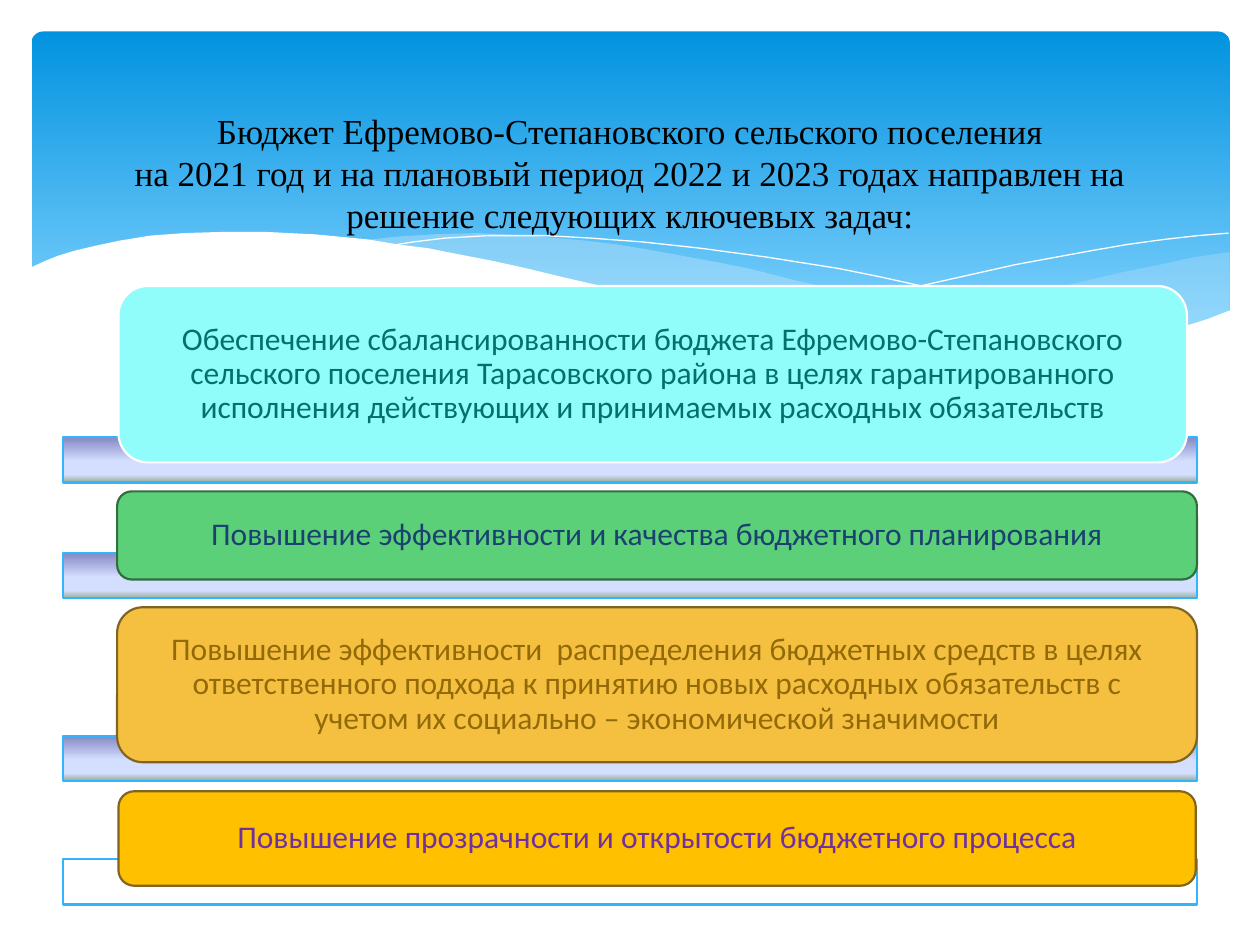
from lxml import etree
from pptx import Presentation
from pptx.dml.color import RGBColor
from pptx.enum.shapes import MSO_SHAPE
from pptx.enum.text import MSO_ANCHOR, MSO_AUTO_SIZE, PP_ALIGN
from pptx.oxml.ns import qn
from pptx.util import Inches, Pt

RECTANGLE = MSO_SHAPE.RECTANGLE
ROUNDED = MSO_SHAPE.ROUNDED_RECTANGLE
MIDDLE = MSO_ANCHOR.MIDDLE
CENTER = PP_ALIGN.CENTER
NO_AUTOFIT = MSO_AUTO_SIZE.NONE
TITLE_ONLY = 5

TITLE = (
    "Бюджет Ефремово-Степановского сельского поселения\v"
    "на 2021 год и на плановый период 2022 и 2023 годах направлен на "
    "решение следующих ключевых задач:"
)
HEADER_STOPS = [(0, "0293E0"), (90, "83D3FE")]
BAR_STOPS = [(0, "8488C4"), (53, "D4DEFF"), (83, "D4DEFF"), (100, "96AB94")]

TASKS = [
    ("Обеспечение сбалансированности бюджета Ефремово-Степановского сельского "
     "поселения Тарасовского района в целях гарантированного исполнения "
     "действующих и принимаемых расходных обязательств",
     (0.94, 2.27, 8.48, 1.4), 3.47, "91FDFA", "FFFFFF", "03706E"),
    ("Повышение эффективности и качества бюджетного планирования",
     (0.93, 3.9, 8.57, 0.7), 4.39, "5BD078", "306D3F", "1B4171"),
    ("Повышение эффективности  распределения бюджетных средств в целях "
     "ответственного подхода к принятию новых расходных обязательств с учетом "
     "их социально – экономической значимости",
     (0.93, 4.82, 8.57, 1.23), 5.84, "F5C040", "806421", "936A08"),
    ("Повышение прозрачности и открытости бюджетного процесса",
     (0.94, 6.28, 8.55, 0.75), 6.82, "FFC000", "806421", "7030A0"),
]

RIGHT_WAVE = [
    (9.76, 2), (9.48, 2.04), (9.21, 2.1), (8.91, 2.16), (8.61, 2.23),
    (8.05, 2.37), (7.53, 2.48), (7.06, 2.57), (6.61, 2.65), (6.91, 2.69),
    (7.19, 2.72), (7.45, 2.75), (7.69, 2.77), (8.03, 2.78), (8.35, 2.77),
    (8.63, 2.75), (8.89, 2.72), (9.13, 2.67), (9.35, 2.62), (9.49, 2.57),
    (9.63, 2.52), (9.76, 2.47),
]
MIDDLE_WAVE = [
    (8.93, 2.73), (8.66, 2.69), (8.37, 2.65), (8.07, 2.6), (7.75, 2.54),
    (7.41, 2.47), (7.06, 2.4), (6.68, 2.31), (6.29, 2.22), (5.98, 2.14),
    (5.69, 2.08), (5.41, 2.03), (5.14, 1.98), (4.89, 1.94), (4.65, 1.91),
    (4.42, 1.89), (4.2, 1.87), (3.8, 1.85), (3.44, 1.86), (3.13, 1.88),
    (2.86, 1.91), (3.23, 1.96), (3.62, 2.03), (4.04, 2.11), (4.49, 2.22),
    (4.91, 2.32), (5.3, 2.4), (5.66, 2.48), (6.01, 2.55), (6.34, 2.61),
    (6.65, 2.66), (6.95, 2.7), (7.22, 2.74), (7.48, 2.76), (7.85, 2.78),
    (8.28, 2.78), (8.57, 2.77), (8.76, 2.75),
]
FALLING_LINE = [
    (3.09, 1.95), (3.28, 1.92), (3.53, 1.89), (3.87, 1.87), (4.33, 1.87),
    (4.69, 1.89), (5.1, 1.92), (5.56, 1.97), (6.08, 2.04), (6.65, 2.13),
    (6.95, 2.19), (7.27, 2.26), (7.6, 2.33), (7.95, 2.41), (8.31, 2.51),
    (8.69, 2.61), (9.07, 2.72),
]
RISING_LINE = [
    (6.13, 2.57), (6.53, 2.46), (6.95, 2.35), (7.48, 2.23), (8.06, 2.1),
    (8.66, 1.99), (8.95, 1.94), (9.24, 1.9), (9.51, 1.87), (9.75, 1.85),
]
WHITE_WAVE = [
    (9.77, 2.46), (9.59, 2.53), (9.4, 2.59), (9.2, 2.65), (8.99, 2.69),
    (8.75, 2.73), (8.5, 2.75), (8.23, 2.77), (7.93, 2.76), (7.61, 2.75),
    (7.26, 2.72), (6.88, 2.68), (6.48, 2.62), (6.03, 2.54), (5.55, 2.45),
    (5.03, 2.33), (4.47, 2.2), (4.18, 2.13), (3.91, 2.07), (3.65, 2.02),
    (3.4, 1.97), (3.16, 1.94), (2.92, 1.9), (2.71, 1.88), (2.5, 1.86),
    (2.3, 1.85), (2.11, 1.84), (1.77, 1.84), (1.46, 1.85), (1.19, 1.87),
    (0.95, 1.91), (0.76, 1.95), (0.59, 1.99), (0.46, 2.03), (0.36, 2.07),
    (0.23, 2.13), (0.23, 3.29), (9.77, 3.29),
]


def color(value):
    return RGBColor.from_string(value)


def fill_solid(shape, value, opacity=100):
    shape.fill.solid()
    shape.fill.fore_color.rgb = color(value)
    if opacity < 100:
        node = shape.element.spPr.find(f"{qn('a:solidFill')}/{qn('a:srgbClr')}")
        etree.SubElement(node, qn("a:alpha"), val=str(opacity * 1000))


def fill_gradient(shape, stops):
    shape.fill.gradient()
    shape.fill.gradient_angle = 270
    stop_list = shape.element.spPr.find(f".//{qn('a:gsLst')}")
    stop_list.clear()
    for position, value in stops:
        stop = etree.SubElement(stop_list, qn("a:gs"), pos=str(position * 1000))
        etree.SubElement(stop, qn("a:srgbClr"), val=value)


def set_outline(shape, value=None, width=1.25):
    if value is None:
        shape.line.fill.background()
    else:
        shape.line.color.rgb = color(value)
        shape.line.width = Pt(width)


def add_box(slide, kind, box):
    shape = slide.shapes.add_shape(kind, *map(Inches, box))
    shape.shadow.inherit = False
    return shape


def add_curve(slide, points, closed):
    points = [(Inches(x), Inches(y)) for x, y in points]
    builder = slide.shapes.build_freeform(*points[0])
    builder.add_line_segments(points[1:], close=closed)
    shape = builder.convert_to_shape()
    shape.shadow.inherit = False
    return shape


def add_wave(slide, points, value, opacity=100):
    wave = add_curve(slide, points, True)
    fill_solid(wave, value, opacity)
    set_outline(wave)


def add_wave_line(slide, points):
    wave_line = add_curve(slide, points, False)
    wave_line.fill.background()
    set_outline(wave_line, "FFFFFF", 0)


def add_header(slide, box):
    panel = add_box(slide, ROUNDED, box)
    panel.adjustments[0] = 0.034
    fill_gradient(panel, HEADER_STOPS)
    set_outline(panel)
    add_wave(slide, RIGHT_WAVE, "C6E7FC", 29)
    add_wave(slide, MIDDLE_WAVE, "C6E7FC", 40)
    add_wave_line(slide, FALLING_LINE)
    add_wave_line(slide, RISING_LINE)
    add_wave(slide, WHITE_WAVE, "FFFFFF")


def write_text(shape, text, font_name, size, value):
    text_frame = shape.text_frame
    text_frame.text = text
    text_frame.word_wrap = True
    text_frame.auto_size = NO_AUTOFIT
    text_frame.vertical_anchor = MIDDLE
    paragraph = text_frame.paragraphs[0]
    paragraph.alignment = CENTER
    for run in paragraph.runs:
        run.font.name = font_name
        run.font.size = Pt(size)
        run.font.color.rgb = color(value)
    return paragraph


def add_bar(slide, box, is_last):
    bar = add_box(slide, RECTANGLE, box)
    if is_last:
        fill_solid(bar, "FFFFFF", 90)
    else:
        fill_gradient(bar, BAR_STOPS)
    set_outline(bar, "31B6FD")


def add_task(slide, box, text, fill, outline, text_color):
    card = add_box(slide, ROUNDED, box)
    fill_solid(card, fill)
    set_outline(card, outline)
    paragraph = write_text(card, text, "Calibri", 18, text_color)
    paragraph.line_spacing = 0.9
    card.text_frame.margin_left = card.text_frame.margin_right = Inches(0.24)
    card.text_frame.margin_top = card.text_frame.margin_bottom = 0


def place_title(slide, box):
    title = slide.shapes.title
    title.left, title.top, title.width, title.height = map(Inches, box)
    write_text(title, TITLE, "Times New Roman", 20, "000000")
    title.text_frame.margin_bottom = Inches(0.35)
    slide.shapes.element.append(title.element)


def main():
    presentation = Presentation()
    presentation.slide_width = Inches(10)
    presentation.slide_height = Inches(7.5)
    slide = presentation.slides.add_slide(presentation.slide_layouts[TITLE_ONLY])
    add_header(slide, (0.25, 0.25, 9.51, 2.7))
    for text, box, bar_top, fill, outline, text_color in TASKS:
        add_bar(slide, (0.5, bar_top, 9, 0.36), text == TASKS[-1][0])
        add_task(slide, box, text, fill, outline, text_color)
    place_title(slide, (0.5, 0.78, 9, 1.48))
    presentation.save("out.pptx")


if __name__ == "__main__":
    main()
